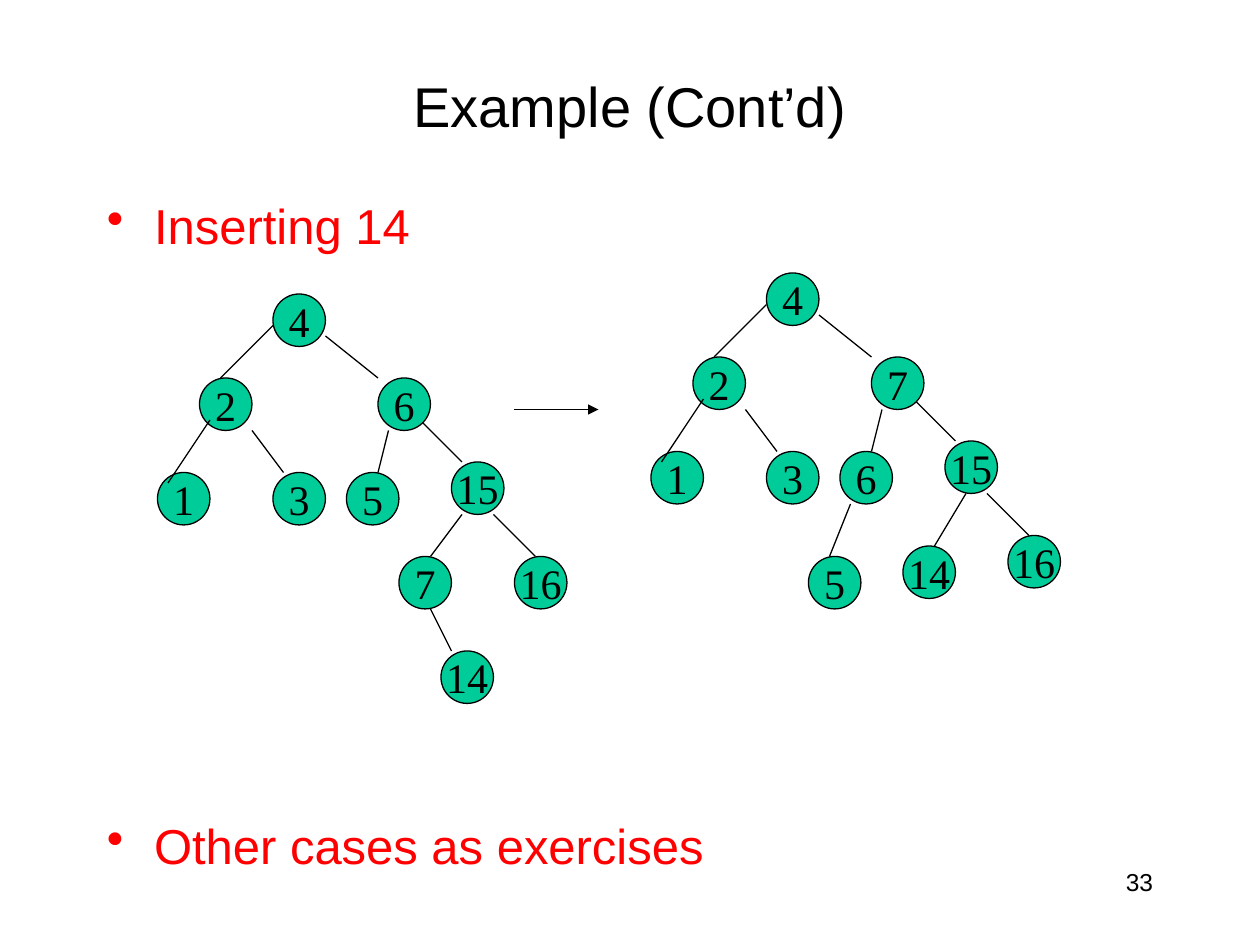
from lxml.etree import SubElement
from pptx import Presentation
from pptx.dml.color import RGBColor
from pptx.enum.shapes import MSO_CONNECTOR as Connector, MSO_SHAPE as Shape
from pptx.enum.text import MSO_ANCHOR as Anchor, PP_ALIGN as Align
from pptx.oxml.ns import qn
from pptx.util import Pt

LEFT_LEAF = {"1": (0, 102), "2": (24, 48)}
LEFT_LEAF_EDGE = (30, 72, 6, 108)
SHARED_NODES = {"3": (66, 102), "4": (66, 0), "15": (168, 96), "16": (204, 150)}
SHARED_EDGES = [
    (66, 18, 36, 48), (96, 24, 126, 48), (150, 72, 174, 96),
    (54, 78, 72, 102), (132, 78, 126, 102), (192, 126, 216, 150),
]
PIVOT, PIVOT_CHILD = (126, 48), (108, 102)


def color(value):
    return RGBColor.from_string(value)


class TreeSlide:
    black, red, green = "000000", "FF0000", "00CC99"
    sans, serif = "Arial", "Times New Roman"
    diameter, stroke = 30, 0.75

    def __init__(self, slide):
        self.shapes = slide.shapes

    def style(self, paragraph, text, size, font, ink, align):
        paragraph.text = text
        paragraph.alignment = align
        paragraph.font.size = Pt(size)
        paragraph.font.name = font
        paragraph.font.color.rgb = color(ink)

    def text(self, box, content, size, align, anchor=Anchor.TOP):
        frame = self.shapes.add_textbox(*map(Pt, box)).text_frame
        frame.word_wrap = True
        frame.vertical_anchor = anchor
        self.style(frame.paragraphs[0], content, size, self.sans, self.black, align)

    def bullets(self, box, items):
        frame = self.shapes.add_textbox(*map(Pt, box)).text_frame
        frame.word_wrap = True
        for index, (content, space) in enumerate(items):
            paragraph = frame.add_paragraph() if index else frame.paragraphs[0]
            self.style(paragraph, content, 28, self.sans, self.red, Align.LEFT)
            paragraph.space_before = Pt(space)
            properties = paragraph._p.get_or_add_pPr()
            properties.set("marL", str(Pt(27)))
            properties.set("indent", str(Pt(-27)))
            bullet = properties.makeelement(qn("a:buChar"), {"char": "•"})
            properties.find(qn("a:defRPr")).addprevious(bullet)

    def node(self, label, left, top):
        circle = self.shapes.add_shape(
            Shape.OVAL, Pt(left), Pt(top), Pt(self.diameter), Pt(self.diameter))
        circle.shadow.inherit = False
        circle.fill.solid()
        circle.fill.fore_color.rgb = color(self.green)
        circle.line.color.rgb = color(self.black)
        circle.line.width = Pt(self.stroke)
        frame = circle.text_frame
        frame.word_wrap = False
        frame.vertical_anchor = Anchor.MIDDLE
        self.style(frame.paragraphs[0], label, 24, self.serif, self.black, Align.CENTER)

    def line(self, x1, y1, x2, y2, arrow=False):
        edge = self.shapes.add_connector(Connector.STRAIGHT, Pt(x1), Pt(y1), Pt(x2), Pt(y2))
        edge.line.color.rgb = color(self.black)
        edge.line.width = Pt(self.stroke)
        if arrow:
            SubElement(edge.line._get_or_add_ln(), qn("a:tailEnd"), type="triangle")
        SubElement(edge._element.spPr, qn("a:effectLst"))

    def tree(self, left, top, own_nodes, own_edges):
        def nodes(positions):
            for label, (x, y) in positions.items():
                self.node(label, left + x, top + y)

        def edges(ends):
            for x1, y1, x2, y2 in ends:
                self.line(left + x1, top + y1, left + x2, top + y2)

        nodes(LEFT_LEAF)
        edges(SHARED_EDGES + own_edges)
        nodes(SHARED_NODES | own_nodes)
        edges([LEFT_LEAF_EDGE])


def main():
    deck = Presentation()
    deck.slide_width, deck.slide_height = Pt(720), Pt(540)
    page = TreeSlide(deck.slides.add_slide(deck.slide_layouts[6]))

    page.text((54, 30, 612, 60), "Example (Cont’d)", 32, Align.CENTER, Anchor.MIDDLE)
    page.bullets((54, 108, 612, 372), [("Inserting 14", 3), ("Other cases as exercises", 321)])
    page.text((516, 492, 150, 36), "33", 14, Align.RIGHT)

    page.tree(
        90, 168,
        {"6": PIVOT, "5": PIVOT_CHILD, "7": (138, 150), "14": (162, 204)},
        [(174, 126, 156, 150), (156, 180, 168, 204)])
    page.line(294, 234, 342, 234, arrow=True)
    page.tree(
        372, 156,
        {"7": PIVOT, "6": PIVOT_CHILD, "5": (90, 162), "14": (144, 156)},
        [(114, 132, 102, 162), (180, 126, 162, 156)])

    deck.save("out.pptx")


if __name__ == "__main__":
    main()
